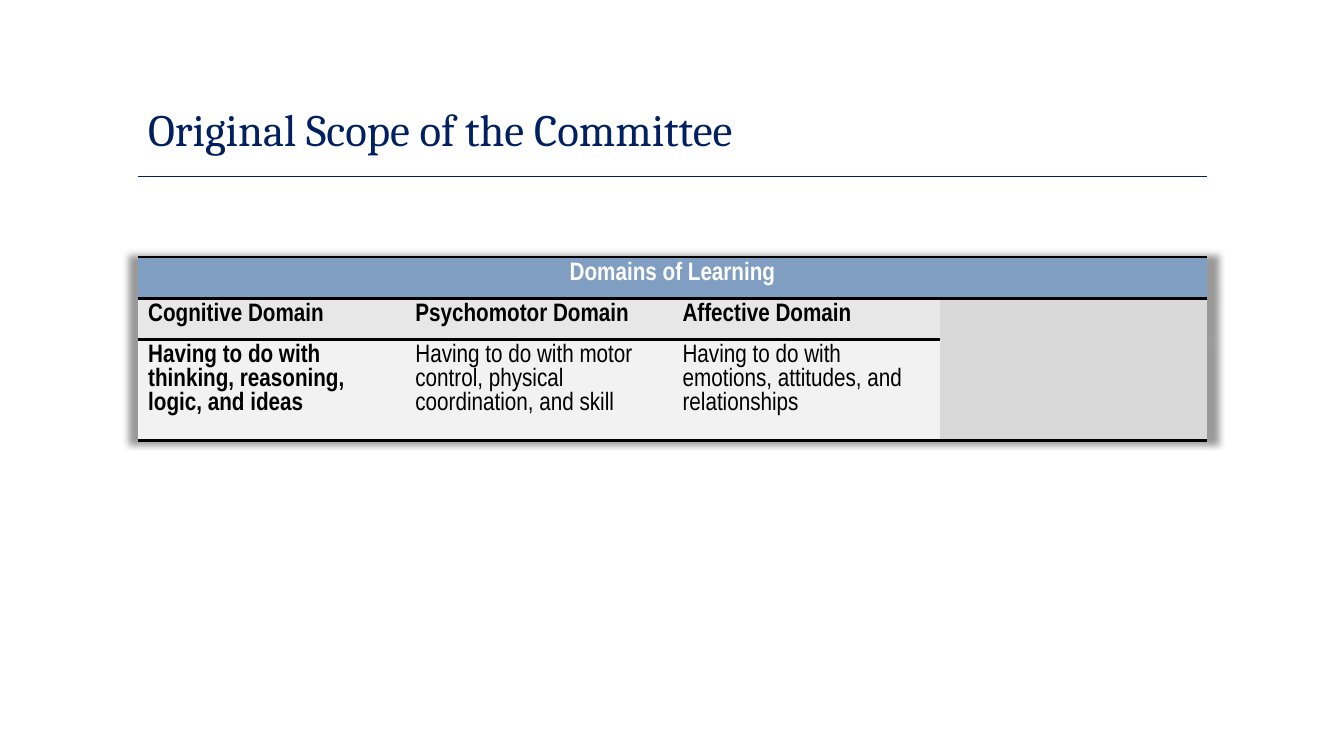
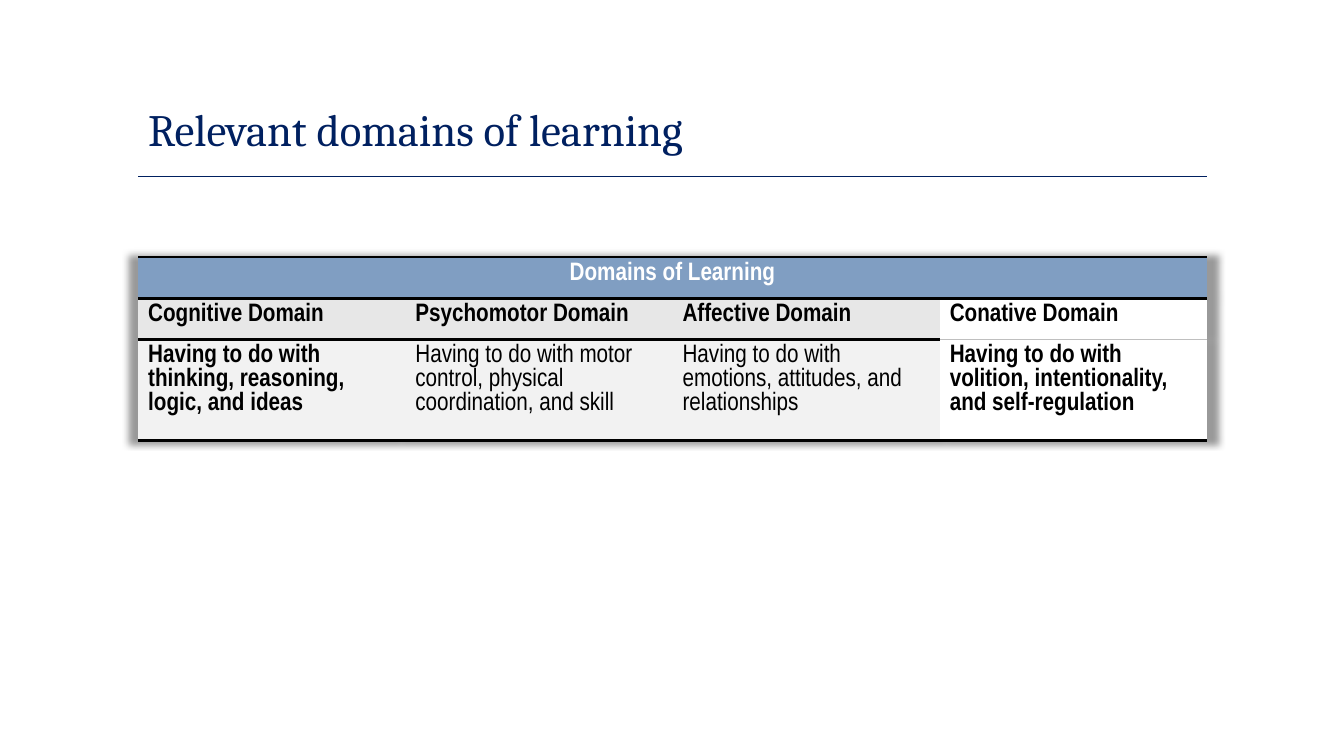
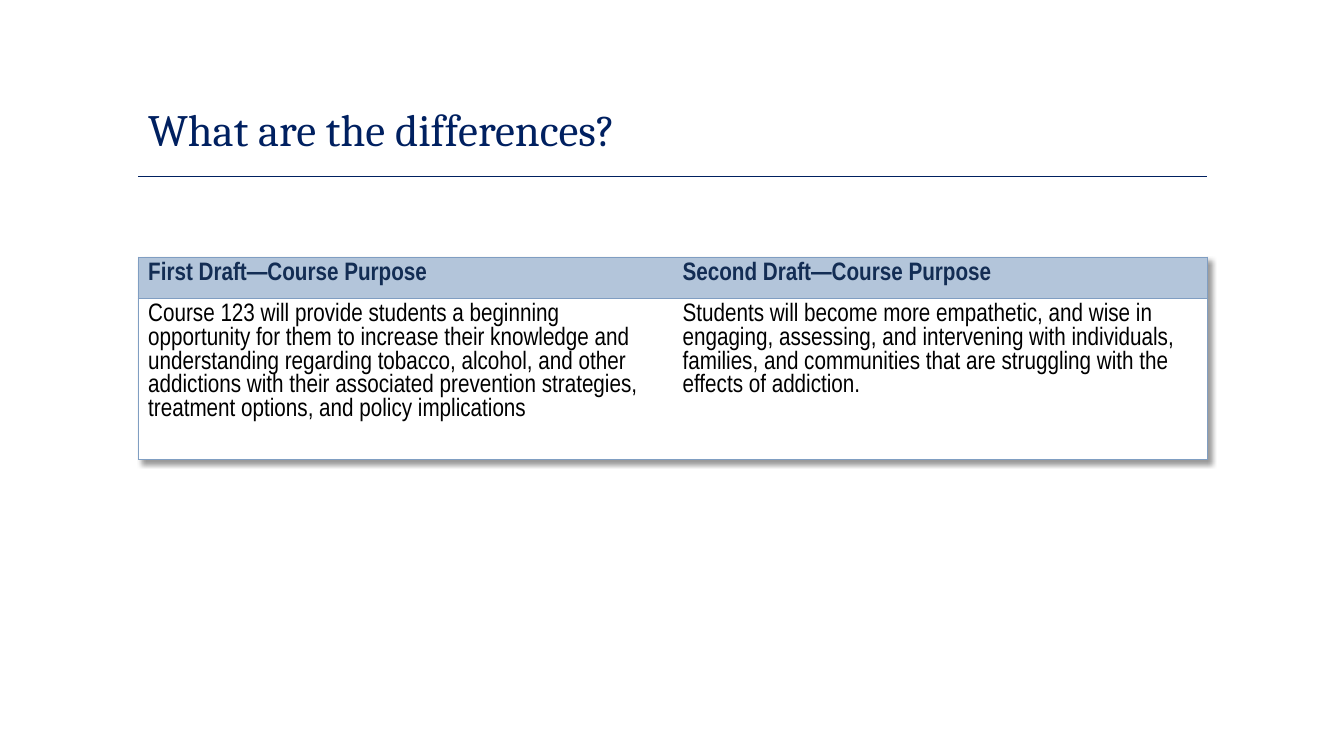
from lxml.etree import SubElement as Sub
from pptx import Presentation
from pptx.dml.color import RGBColor as RGB
from pptx.enum.shapes import MSO_CONNECTOR as Conn
from pptx.enum.text import MSO_ANCHOR as Anchor, PP_ALIGN as Align
from pptx.oxml.ns import qn
from pptx.util import Inches, Pt

# Shared look
NAVY = RGB(0x00, 0x20, 0x60)
INK = RGB(0x13, 0x2D, 0x54)
BLUE = RGB(0x80, 0x9E, 0xC2)
PALE = RGB(0xB3, 0xC5, 0xDA)
BLACK = RGB(0x00, 0x00, 0x00)
WHITE = RGB(0xFF, 0xFF, 0xFF)
HEAD = RGB(0xE7, 0xE7, 0xE7)
BODY = RGB(0xF2, 0xF2, 0xF2)
BLANK = RGB(0xD9, 0xD9, 0xD9)
GREY = RGB(0xBF, 0xBF, 0xBF)
LEFT, WIDTH = 1.37, 10.6
TOP, ROW = 2.55, 0.41
PLAIN = "{2D5ABB26-0587-4C30-8999-92F81FD0307C}"

# Borders as (colour, points)
THICK = (BLACK, 2)
THIN = (BLUE, 0.5)
HAIR = (GREY, 0.5)

# Table shadows
HALO = dict(blurRad="63500", sx="102000", sy="102000", algn="ctr",
            rotWithShape="0")
DROP = dict(blurRad="50800", dist="38100", dir="2700000", algn="tl",
            rotWithShape="0")

# Domain columns: heading, meaning, body in bold
DOMAINS = [
    ("Cognitive Domain",
     "Having to do with thinking, reasoning, logic, and ideas", True),
    ("Psychomotor Domain",
     "Having to do with motor control, physical coordination, and skill",
     False),
    ("Affective Domain",
     "Having to do with emotions, attitudes, and relationships", False),
]
CONATIVE = (
    "Conative Domain",
    "Having to do with volition, intentionality, and self-regulation", True)
DRAFTS = [
    ("First Draft—Course Purpose",
     "Course 123 will provide students a beginning opportunity for them to "
     "increase their knowledge and understanding regarding tobacco, alcohol, "
     "and other addictions with their associated prevention strategies, "
     "treatment options, and policy implications"),
    ("Second Draft—Course Purpose",
     "Students will become more empathetic, and wise in engaging, assessing, "
     "and intervening with individuals, families, and communities that are "
     "struggling with the effects of addiction."),
]


def style(para, face, size, color, bold=False):
    for run in para.runs:
        run.font.name = face
        run.font.size = Pt(size)
        run.font.color.rgb = color
        run.font.bold = bold


def add_page(deck, title):
    """Slide with the shared title and the rule below it."""
    page = deck.slides.add_slide(deck.slide_layouts[6])
    rule = page.shapes.add_connector(
        Conn.STRAIGHT, Inches(LEFT + WIDTH), Inches(1.75),
        Inches(LEFT), Inches(1.75))
    rule.line.color.rgb = NAVY
    rule.line.width = Pt(0.5)
    Sub(rule._element.spPr, qn("a:effectLst"))

    box = page.shapes.add_textbox(
        Inches(LEFT), Inches(0.38), Inches(WIDTH), Inches(1.8))
    frame = box.text_frame
    frame.word_wrap = True
    frame.vertical_anchor = Anchor.MIDDLE
    frame.text = title
    style(frame.paragraphs[0], "Cambria", 32, NAVY)
    return page


def add_grid(page, rows, cols, shadow):
    """Unstyled table with equal columns and a shadow."""
    grid = page.shapes.add_table(
        rows, cols, Inches(LEFT), Inches(TOP),
        Inches(WIDTH), Inches(ROW * rows)).table
    grid.first_row = grid.horz_banding = False
    props = grid._tbl.tblPr
    props.find(qn("a:tableStyleId")).text = PLAIN
    effect = Sub(props, qn("a:effectLst"))
    props.insert(0, effect)
    color = Sub(Sub(effect, qn("a:outerShdw"), shadow),
                qn("a:prstClr"), val="black")
    Sub(color, qn("a:alpha"), val="40000")
    return grid


def fill_cell(cell, text, fill, color=BLACK, bold=False, **edges):
    """Text, fill and borders; edges are keyed L, R, T and B."""
    props = cell._tc.get_or_add_tcPr()
    for side in "LRTB":
        if side in edges:
            tint, size = edges[side]
            line = Sub(props, qn("a:ln" + side), w=str(Pt(size)))
            Sub(Sub(line, qn("a:solidFill")), qn("a:srgbClr"), val=str(tint))
    cell.fill.solid()
    cell.fill.fore_color.rgb = fill
    if text:
        cell.text_frame.text = text
        style(cell.text_frame.paragraphs[0], "Arial Narrow", 18, color, bold)


def add_domains(page, last=None):
    """Domain table; the fourth column stays blank without last."""
    grid = add_grid(page, 3, 4, HALO)
    for col in range(4):
        fill_cell(grid.cell(0, col), "" if col else "Domains of Learning",
                  BLUE, WHITE, True, T=THICK, B=THICK)
    grid.cell(0, 0).merge(grid.cell(0, 3))
    grid.cell(0, 0).text_frame.paragraphs[0].alignment = Align.CENTER

    for col, (head, body, bold) in enumerate(DOMAINS):
        fill_cell(grid.cell(1, col), head, HEAD, bold=True, T=THICK)
        fill_cell(grid.cell(2, col), body, BODY, bold=bold, B=THICK)

    head, body, bold = last or ("", "", False)
    fill = WHITE if last else BLANK
    split = HAIR if last else (BLANK, 0.5)
    fill_cell(grid.cell(1, 3), head, fill, bold=True, T=THICK, B=split)
    fill_cell(grid.cell(2, 3), body, fill, bold=bold, T=split, B=THICK)


def add_drafts(page):
    """Two drafts side by side in a thin frame."""
    grid = add_grid(page, 2, 2, DROP)
    for col, (head, body) in enumerate(DRAFTS):
        edges = {"LR"[col]: THIN, "T": THIN, "B": THIN}
        fill_cell(grid.cell(0, col), head, PALE, INK, True, **edges)
        fill_cell(grid.cell(1, col), body, WHITE, **edges)


def main():
    deck = Presentation()
    deck.slide_width, deck.slide_height = Inches(13.33), Inches(7.5)
    add_domains(add_page(deck, "Original Scope of the Committee"))
    add_domains(add_page(deck, "Relevant domains of learning"), CONATIVE)
    add_drafts(add_page(deck, "What are the differences?"))
    deck.save("out.pptx")


if __name__ == "__main__":
    main()
